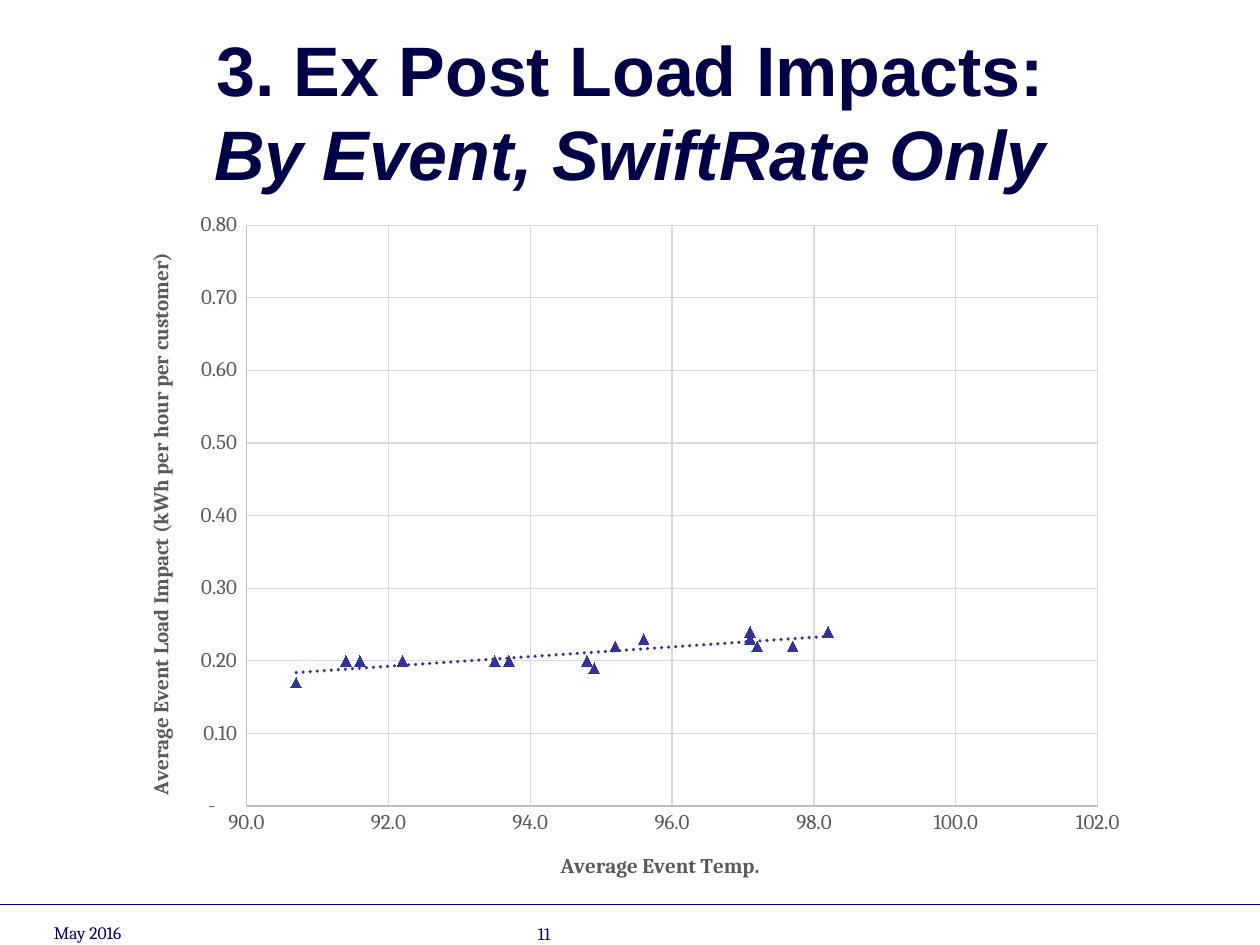
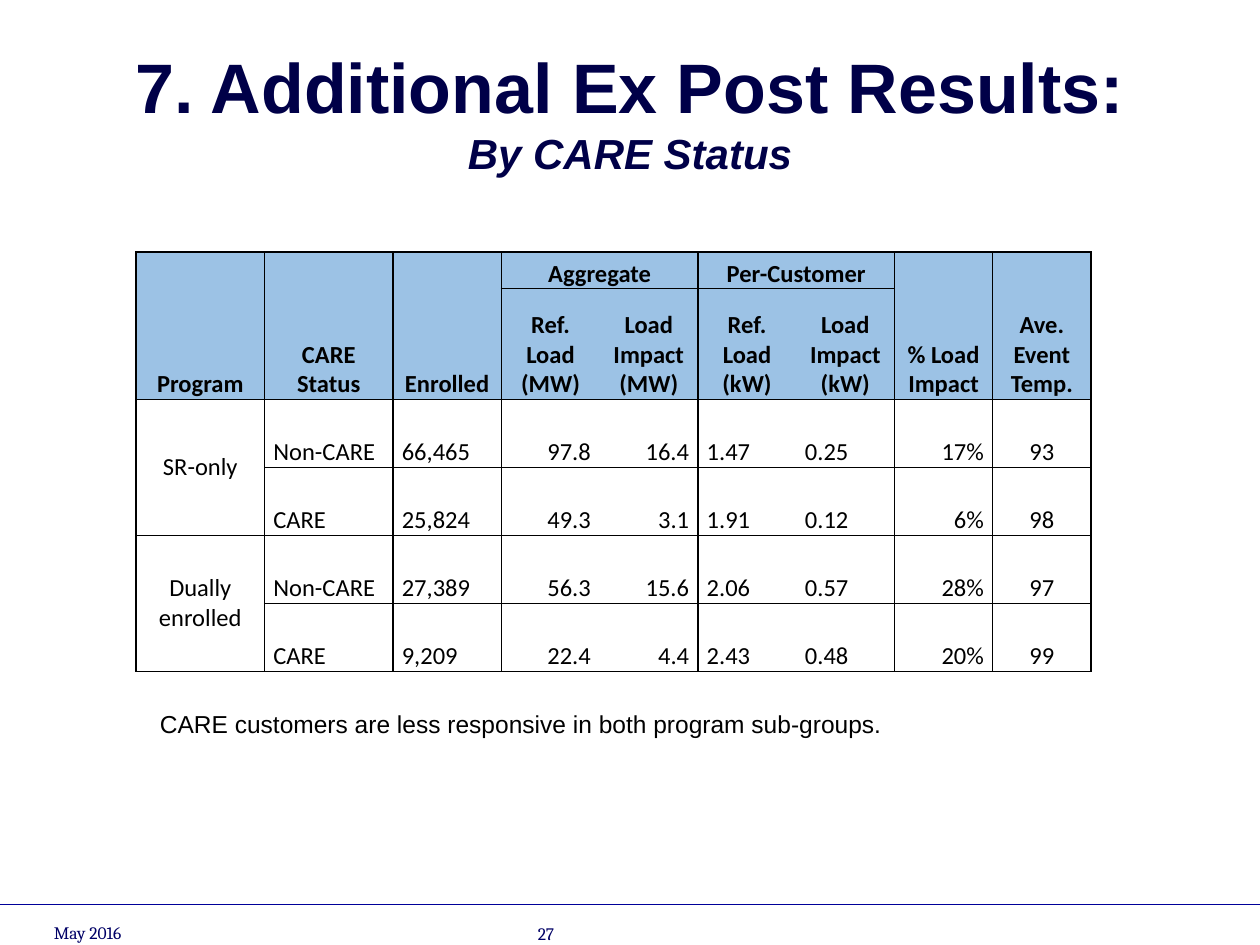
from lxml import etree
from pptx import Presentation
from pptx import util as u
from pptx.chart.data import XyChartData
from pptx.dml.color import RGBColor
from pptx.enum import chart as charts, shapes, text
from pptx.oxml import parse_xml
from pptx.oxml.ns import nsdecls, qn

NAVY, FOOTER, RULE, BLACK = "000048", "000066", "000099", "000000"
GREY, AXIS, GRID, MARKER, HEADER = "595959", "BFBFBF", "D9D9D9", "333399", "9CC2E5"
LEFT, CENTER, RIGHT = text.PP_ALIGN.LEFT, text.PP_ALIGN.CENTER, text.PP_ALIGN.RIGHT
TOP, MIDDLE, BOTTOM = text.MSO_ANCHOR.TOP, text.MSO_ANCHOR.MIDDLE, text.MSO_ANCHOR.BOTTOM


def color(value):
    return RGBColor.from_string(value)


def style_font(font, size=14, name="Arial", ink=BLACK, bold=False, italic=False):
    font.size, font.name, font.bold, font.italic = u.Pt(size), name, bold, italic
    font.color.rgb = color(ink)


def style_line(line, ink, width=0.75):
    line.color.rgb = color(ink)
    line.width = u.Pt(width)


def write(para, words, align=LEFT, **style):
    """Add one run to a paragraph."""
    para.alignment = align
    span = para.add_run()
    span.text = words
    style_font(span.font, **style)


class SlideMaker:
    """Holds the deck, its common style and the current slide."""

    def __init__(self):
        self.deck = Presentation()
        self.deck.slide_width, self.deck.slide_height = u.Inches(10), u.Inches(7.5)
        self.page = None

    def start(self, number, heading, subheading, subsize):
        self.page = self.deck.slides.add_slide(self.deck.slide_layouts[6])
        # Footer
        self.rule(7.18)
        for left, top, words in ((0.33, 7.01, "May 2016"), (4.17, 7.02, str(number))):
            para = self.box(left, top, 2.33, 0.52, BOTTOM)
            write(para, words, size=10, name="Cambria", ink=FOOTER)
        # Title
        para = self.box(0.5, 0.25, 9, 1.25, MIDDLE)
        write(para, heading, CENTER, size=40, ink=NAVY, bold=True)
        para.add_line_break()
        write(para, subheading, CENTER, size=subsize, ink=NAVY, bold=True, italic=True)

    def rule(self, top):
        line = self.page.shapes.add_connector(
            shapes.MSO_CONNECTOR.STRAIGHT, 0, u.Inches(top), u.Inches(10), u.Inches(top))
        style_line(line.line, RULE)
        etree.SubElement(line._element.spPr, qn("a:effectLst"))

    def box(self, left, top, width, height, anchor=TOP):
        """Add a text box and return its first paragraph."""
        frame = self.page.shapes.add_textbox(
            *map(u.Inches, (left, top, width, height))).text_frame
        frame.word_wrap = True
        frame.vertical_anchor = anchor
        return frame.paragraphs[0]

    def scatter(self, left, top, width, height, points):
        data = XyChartData()
        series_data = data.add_series("Series 1")
        for point in points:
            series_data.add_data_point(*point)
        chart = self.page.shapes.add_chart(
            charts.XL_CHART_TYPE.XY_SCATTER,
            *map(u.Inches, (left, top, width, height)), data).chart
        chart.has_legend = chart.has_title = False
        style_font(chart.font, 10, "Cambria")
        plot = chart.plots[0]
        plot.vary_by_categories = False

        # Markers and trend line
        series = plot.series[0]
        series.smooth = False
        series.format.line.fill.background()
        series.marker.style = charts.XL_MARKER_STYLE.TRIANGLE
        series.marker.size = 6
        series.marker.format.fill.solid()
        series.marker.format.fill.fore_color.rgb = color(MARKER)
        style_line(series.marker.format.line, MARKER)
        series._element.find(qn("c:xVal")).addprevious(parse_xml(
            f'<c:trendline {nsdecls("c", "a")}><c:spPr><a:ln w="{u.Pt(2)}" cap="rnd">'
            f'<a:solidFill><a:srgbClr val="{MARKER}"/></a:solidFill>'
            '<a:prstDash val="sysDot"/></a:ln></c:spPr><c:trendlineType val="linear"/>'
            '<c:dispRSqr val="0"/><c:dispEq val="0"/></c:trendline>'))

        # Inner plot area, as fractions of the chart
        area = chart._chartSpace.chart.plotArea
        for layout in area.findall(qn("c:layout")):
            area.remove(layout)
        places = "".join(f'<c:{key} val="{value}"/>' for key, value in (
            ("layoutTarget", "inner"), ("xMode", "edge"), ("yMode", "edge"),
            ("x", 0.127), ("y", 0.037), ("w", 0.828), ("h", 0.822)))
        area.insert(0, parse_xml(f'<c:layout {nsdecls("c")}><c:manualLayout>{places}'
                                 '</c:manualLayout></c:layout>'))
        return chart

    def axis(self, axis, title, low, high, step, number_format):
        axis.minimum_scale, axis.maximum_scale, axis.major_unit = low, high, step
        axis.major_tick_mark = axis.minor_tick_mark = charts.XL_TICK_MARK.NONE
        axis.has_major_gridlines = True
        style_line(axis.major_gridlines.format.line, GRID)
        style_line(axis.format.line, AXIS)
        labels = axis.tick_labels
        labels.number_format, labels.number_format_is_linked = number_format, False
        style_font(labels.font, 12, "Cambria", GREY)
        write(axis.axis_title.text_frame.paragraphs[0], title, CENTER,
              size=12, name="Cambria", ink=GREY, bold=True)

    def table(self, left, top, widths, heights):
        frame = self.page.shapes.add_table(
            len(heights), len(widths), *map(u.Inches, (left, top, sum(widths), sum(heights))))
        table = frame.table
        table.first_row = table.horz_banding = False
        for column, width in zip(table.columns, widths):
            column.width = u.Inches(width)
        for row, height in zip(table.rows, heights):
            row.height = u.Inches(height)
        return table

    def cell(self, cell, words, align, anchor=BOTTOM, fill=None, bold=False, open_sides=""):
        cell.margin_left = cell.margin_right = u.Inches(0.07)
        cell.margin_top = cell.margin_bottom = 0
        cell.vertical_anchor = anchor
        para = cell.text_frame.paragraphs[0]
        style_font(para.font, 14, "Calibri")
        if words:
            write(para, words, align, name="Calibri", bold=bold)
        # Borders come before the fill
        for side in "LRTB":
            paint = ("<a:noFill/>" if side in open_sides else
                     f'<a:solidFill><a:srgbClr val="{BLACK}"/></a:solidFill>')
            cell._tc.get_or_add_tcPr().append(parse_xml(
                f'<a:ln{side} {nsdecls("a")} w="{u.Pt(1)}">{paint}</a:ln{side}>'))
        if fill:
            cell.fill.solid()
            cell.fill.fore_color.rgb = color(fill)
        else:
            cell.fill.background()


def load_impact_slide(maker):
    maker.start(11, "3. Ex Post Load Impacts:", "By Event, SwiftRate Only", 40)
    events = [(91.6, 0.2), (95.2, 0.22), (93.5, 0.2), (98.2, 0.24), (91.4, 0.2),
              (95.6, 0.23), (97.1, 0.24), (92.2, 0.2), (97.1, 0.23), (90.7, 0.17),
              (94.8, 0.2), (94.9, 0.19), (97.7, 0.22), (97.2, 0.22), (93.7, 0.2)]
    chart = maker.scatter(0.92, 1.58, 8.16, 5.61, events)
    maker.axis(chart.category_axis, "Average Event Temp.", 90, 102, 2, "0.0")
    maker.axis(chart.value_axis, "Average Event Load Impact (kWh per hour per customer)",
               0, 0.8, 0.1, '0.00_);(0.00);"-"??_)')


def care_status_slide(maker):
    maker.start(27, "7. Additional Ex Post Results:", "By CARE Status", 24)
    rows = [
        ["", "", "", "Aggregate", "", "Per-Customer", "", "", ""],
        ["Program", "CARE Status", "Enrolled", "Ref. Load (MW)", "Load Impact (MW)",
         "Ref. Load (kW)", "Load Impact (kW)", "% Load Impact", "Ave. Event Temp."],
        ["SR-only", "Non-CARE", "66,465", "97.8", "16.4", "1.47", "0.25", "17%", "93"],
        ["", "CARE", "25,824", "49.3", "3.1", "1.91", "0.12", "6%", "98"],
        ["Dually enrolled", "Non-CARE", "27,389", "56.3", "15.6", "2.06", "0.57", "28%", "97"],
        ["", "CARE", "9,209", "22.4", "4.4", "2.43", "0.48", "20%", "99"],
    ]
    aligns = [CENTER, LEFT, LEFT, RIGHT, RIGHT, LEFT, LEFT, RIGHT, CENTER]
    pair_starts, pair_ends = (3, 5), (4, 6)
    table = maker.table(1.08, 2, [1.02, 1.02, 0.86] + [0.78] * 6, [0.29, 0.88] + [0.54] * 4)
    for r, row in enumerate(rows):
        header = r < 2
        for c, words in enumerate(row):
            # Paired columns share a frame; other headings span both header rows
            sides = ""
            if r and c in pair_starts:
                sides = "R"
            elif r and c in pair_ends:
                sides = "L"
            elif header and c not in pair_starts + pair_ends:
                sides = "T" if r else "B"
            maker.cell(table.cell(r, c), words, CENTER if header else aligns[c],
                       MIDDLE if c == 0 and not header else BOTTOM,
                       HEADER if header else None, header, sides)
    for c in pair_starts:
        table.cell(0, c).merge(table.cell(0, c + 1))
    for r in (2, 4):
        table.cell(r, 0).merge(table.cell(r + 1, 0))

    para = maker.box(1.17, 5.58, 7.42, 0.34)
    write(para, "CARE customers are less responsive in both program sub-groups.")


def main():
    maker = SlideMaker()
    load_impact_slide(maker)
    care_status_slide(maker)
    maker.deck.save("out.pptx")


if __name__ == "__main__":
    main()
